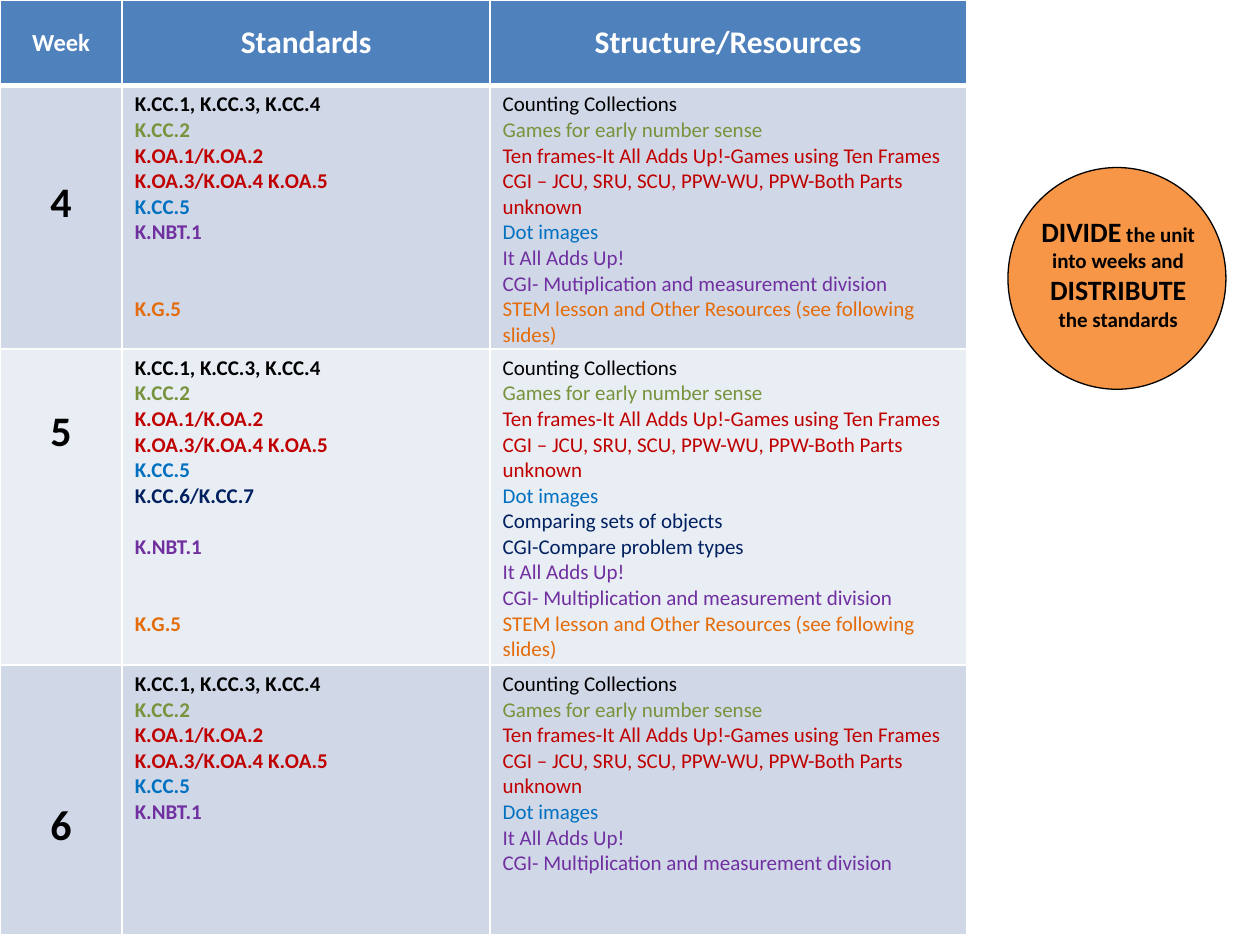
from lxml.etree import SubElement
from pptx import Presentation
from pptx.dml.color import RGBColor
from pptx.enum.shapes import MSO_SHAPE
from pptx.enum.text import MSO_ANCHOR, PP_ALIGN
from pptx.oxml.ns import qn
from pptx.util import Inches, Pt

BLACK, WHITE, GREEN, RED = "000000", "FFFFFF", "77933C", "C00000"
BLUE, PURPLE, NAVY, ORANGE = "0070C0", "7030A0", "002060", "E46C0A"
HEADER, BAND_DARK, BAND_LIGHT = "4F81BD", "D0D8E8", "E9EDF4"
LINE = 14.65

COLUMNS = [0.97, 2.92, 3.78]
ROWS = [0.68, 2.09, 2.51, 2.14]
HEADINGS = [("Week", 14), ("Standards", 18), ("Structure/Resources", 18)]

CORE_STANDARDS = [
    ("K.CC.1, K.CC.3, K.CC.4", BLACK, 0),
    ("K.CC.2", GREEN, 0),
    ("K.OA.1/K.OA.2", RED, 0),
    ("K.OA.3/K.OA.4 K.OA.5", RED, 0),
    ("K.CC.5", BLUE, 0),
]
CORE_RESOURCES = [
    ("Counting Collections", BLACK, 0),
    ("Games for early number sense", GREEN, 0),
    ("Ten frames-It All Adds Up!-Games using Ten Frames", RED, 0),
    ("CGI – JCU, SRU, SCU, PPW-WU, PPW-Both Parts unknown", RED, 0),
    ("Dot images", BLUE, 0),
]
COMPARING = [
    ("Comparing sets of objects", NAVY, 0),
    ("CGI-Compare problem types", NAVY, 0),
]
SERIES = ("It All Adds Up!", PURPLE, 0)
DIVISION = ("CGI- Multiplication and measurement division", PURPLE, 0)
STEM = ("STEM lesson and Other Resources (see following slides)", ORANGE, 0)
GEOMETRY = ("K.G.5", ORANGE, 2)

WEEKS = [
    {
        "number": "4", "fill": BAND_DARK,
        "cell": {"vertical_anchor": MSO_ANCHOR.MIDDLE, "margin_bottom": Inches(0.27)},
        "standards": [("K.NBT.1", PURPLE, 0), GEOMETRY],
        "resources": [SERIES, ("CGI- Mutiplication and measurement division", PURPLE, 0), STEM],
    },
    {
        "number": "5", "fill": BAND_LIGHT,
        "cell": {"vertical_anchor": MSO_ANCHOR.TOP, "margin_top": Inches(0.46)},
        "standards": [("K.CC.6/K.CC.7", NAVY, 0), ("K.NBT.1", PURPLE, 1), GEOMETRY],
        "resources": COMPARING + [SERIES, DIVISION, STEM],
    },
    {
        "number": "6", "fill": BAND_DARK,
        "cell": {"vertical_anchor": MSO_ANCHOR.MIDDLE, "margin_top": Inches(0.46)},
        "standards": [("K.NBT.1", PURPLE, 0)],
        "resources": [SERIES, DIVISION],
    },
]

CALLOUT = [
    ("DIVIDE", 16),
    (" the unit into weeks and ", 12),
    ("DISTRIBUTE ", 16),
    ("the standards", 12),
]


def rgb(value):
    return RGBColor.from_string(value)


def apply(obj, values):
    for name, value in values.items():
        setattr(obj, name, value)


def add_run(p, text, size, color, bold=True):
    r = p.add_run()
    r.text = text
    apply(r.font, {"name": "Calibri", "size": Pt(size), "bold": bold})
    r.font.color.rgb = rgb(color)


def set_borders(cell, bottom):
    tcPr = cell._tc.get_or_add_tcPr()
    widths = {"a:lnL": 1, "a:lnR": 1, "a:lnT": 1, "a:lnB": bottom}
    for index, (tag, width) in enumerate(widths.items()):
        ln = SubElement(tcPr, qn(tag), w=str(Pt(width)))
        fill = SubElement(ln, qn("a:solidFill"))
        SubElement(fill, qn("a:srgbClr"), val=WHITE)
        tcPr.remove(ln)
        tcPr.insert(index, ln)


def style_cell(cell, fill, bottom=1):
    cell.fill.solid()
    cell.fill.fore_color.rgb = rgb(fill)
    set_borders(cell, bottom)


def fill_label(cell, text, size, color, values):
    apply(cell, values)
    p = cell.text_frame.paragraphs[0]
    p.alignment = PP_ALIGN.CENTER
    add_run(p, text, size, color)


def fill_list(cell, items, bold):
    cell.margin_bottom = Inches(0.02)
    tf = cell.text_frame
    for index, (text, color, gap) in enumerate(items):
        p = tf.add_paragraph() if index else tf.paragraphs[0]
        if gap:
            p.space_before = Pt(gap * LINE)
        add_run(p, text, 12, color, bold)


def add_schedule(s):
    frame = s.shapes.add_table(len(ROWS), len(COLUMNS), 0, 0,
                               Inches(sum(COLUMNS)), Inches(sum(ROWS)))
    table = frame.table
    for column, width in zip(table.columns, COLUMNS):
        column.width = Inches(width)
    for row, height in zip(table.rows, ROWS):
        row.height = Inches(height)
    for col, (text, size) in enumerate(HEADINGS):
        cell = table.cell(0, col)
        style_cell(cell, HEADER, 3)
        fill_label(cell, text, size, WHITE, {"vertical_anchor": MSO_ANCHOR.MIDDLE})
    for row, week in enumerate(WEEKS, 1):
        number, standards, resources = (table.cell(row, c) for c in range(3))
        for cell in (number, standards, resources):
            style_cell(cell, week["fill"])
        fill_label(number, week["number"], 24, BLACK, week["cell"])
        fill_list(standards, CORE_STANDARDS + week["standards"], True)
        fill_list(resources, CORE_RESOURCES + week["resources"], False)


def add_callout(s):
    group = s.shapes.add_group_shape()
    sp = group.shapes.add_shape(MSO_SHAPE.OVAL, Inches(8), Inches(1.33),
                                Inches(1.73), Inches(1.76))
    sp.shadow.inherit = False
    sp.fill.solid()
    sp.fill.fore_color.rgb = rgb("F79646")
    sp.line.color.rgb = rgb(BLACK)
    sp.line.width = Pt(0.75)
    box = group.shapes.add_textbox(Inches(8.11), Inches(1.65), Inches(1.53), Inches(1.22))
    tf = box.text_frame
    tf.word_wrap = True
    p = tf.paragraphs[0]
    apply(p, {"alignment": PP_ALIGN.CENTER, "space_after": Pt(10)})
    for text, size in CALLOUT:
        add_run(p, text, size, BLACK)


def main():
    prs = Presentation()
    apply(prs, {"slide_width": Inches(10), "slide_height": Inches(7.5)})
    s = prs.slides.add_slide(prs.slide_layouts[6])
    add_callout(s)
    add_schedule(s)
    prs.save("out.pptx")


if __name__ == "__main__":
    main()
